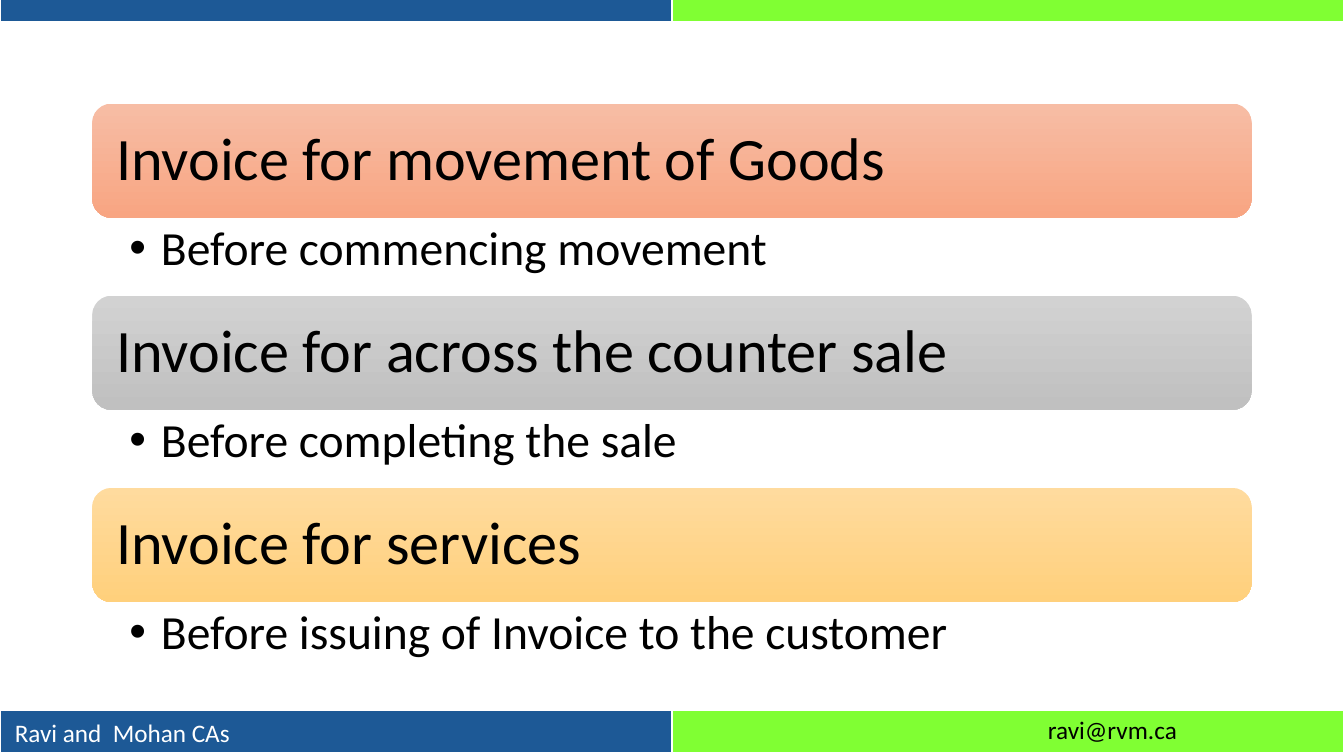
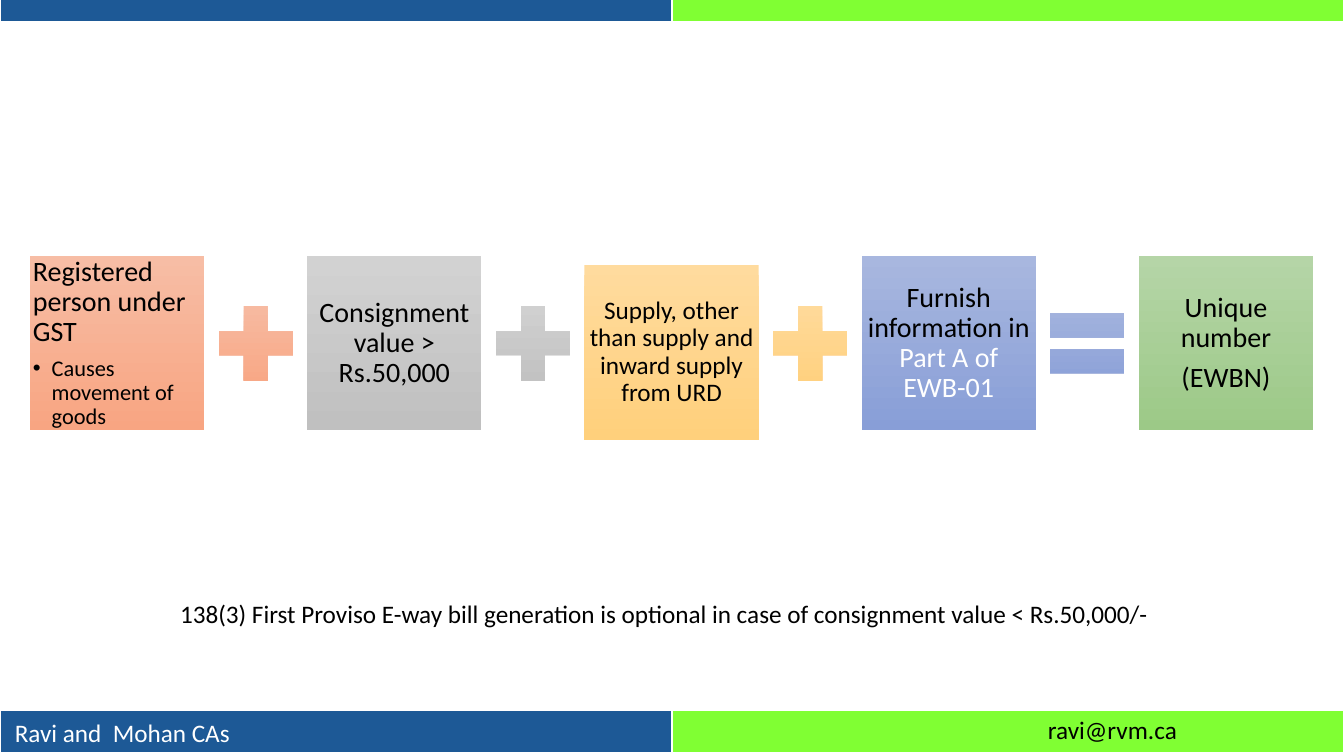
from lxml.etree import SubElement
from pptx import Presentation
from pptx.dml.color import RGBColor
from pptx.enum.shapes import MSO_SHAPE
from pptx.enum.text import MSO_ANCHOR, PP_ALIGN
from pptx.oxml import parse_xml
from pptx.oxml.ns import nsdecls, qn
from pptx.util import Pt

# Shared look
FONT = "Calibri"
BLACK, WHITE = "000000", "FFFFFF"
BAND_COLORS = ("1D5996", "80FF33")
ORANGE = ("F7BDA5", "F8A582")
GRAY = ("D2D2D2", "C0C0C0")
YELLOW = ("FFDB9E", "FFD07C")
BLUE = ("A8B7DF", "889ED7")
GREEN = ("B5D5A7", "9CC987")
PAGE_WIDTH, PAGE_HEIGHT = 960, 540
BAND_HEIGHT = 31
BAND_TOPS = (-15, 507.5)

# Invoice list
LIST_LEFT, LIST_TOP, LIST_WIDTH = 66, 74, 828
HEADING_HEIGHT, DETAIL_HEIGHT = 81.5, 55.75
INVOICES = [
    ("Invoice for movement of Goods", "Before commencing movement", ORANGE),
    ("Invoice for across the counter sale", "Before completing the sale", GRAY),
    ("Invoice for services", "Before issuing of Invoice to the customer", YELLOW),
]

# Equation: one box every step, with a sign centred in each gap
BOX_LEFT, BOX_TOP, BOX_SIZE, BOX_STEP = 21.5, 183, 124.5, 198
SIGN_SIZE = 72.5
PLUS, EQUAL = MSO_SHAPE.MATH_PLUS, MSO_SHAPE.MATH_EQUAL
CENTER = {"align": PP_ALIGN.CENTER}
# Each term: colours, drop below the row, sign that follows, pieces of text
TERMS = [
    (ORANGE, 0, PLUS, [
        ("Registered person under GST", {}),
        ("Causes movement of goods", {"size": 16, "indent": 13.5, "before": 7}),
    ]),
    (GRAY, 0, PLUS, [("Consignment value > Rs.50,000", CENTER)]),
    (YELLOW, 6.5, PLUS, [
        ("Supply, other than supply and inward supply from URD", {"size": 18, **CENTER}),
    ]),
    (BLUE, 0, EQUAL, [
        ("Furnish information in ", CENTER),
        ("Part A of EWB-01", {"color": WHITE, "join": True, **CENTER}),
    ]),
    (GREEN, 0, None, [
        ("Unique number", CENTER),
        ("(EWBN)", {"before": 7, **CENTER}),
    ]),
]


def rgb(value):
    return RGBColor.from_string(value)


def write(frame, text, size=20, color=BLACK, align=PP_ALIGN.LEFT, spacing=0.9,
          before=0, indent=0, join=False):
    """Add text as a new paragraph, or to the last one if join is set."""
    para = frame.paragraphs[-1]
    if para.runs and not join:
        para = frame.add_paragraph()
    para.alignment = align
    para.line_spacing = spacing
    if before:
        para.space_before = Pt(before)
    if indent:
        properties = para._p.get_or_add_pPr()
        properties.set("marL", str(Pt(indent)))
        properties.set("indent", str(-Pt(indent)))
        SubElement(properties, qn("a:buFont")).set("typeface", "Arial")
        SubElement(properties, qn("a:buChar")).set("char", "•")
    span = para.add_run()
    span.text = text
    span.font.name = FONT
    span.font.size = Pt(size)
    span.font.color.rgb = rgb(color)


def set_frame(shape, sides, ends, anchor):
    frame = shape.text_frame
    frame.word_wrap = True
    frame.margin_left = frame.margin_right = Pt(sides)
    frame.margin_top = frame.margin_bottom = Pt(ends)
    frame.vertical_anchor = anchor
    return frame


def add_label(page, left, top, width, height, sides=7.2, ends=3.6):
    box = page.shapes.add_textbox(Pt(left), Pt(top), Pt(width), Pt(height))
    return set_frame(box, sides, ends, MSO_ANCHOR.TOP)


def add_gradient_shape(page, kind, left, top, width, height, colors, margin=2):
    shape = page.shapes.add_shape(kind, Pt(left), Pt(top), Pt(width), Pt(height))
    shape.shadow.inherit = False
    shape.line.fill.background()
    shape.fill.gradient()
    shape.fill.gradient_angle = 270
    for stop, color in zip(shape.fill.gradient_stops, colors):
        stop.color.rgb = rgb(color)
    return set_frame(shape, margin, margin, MSO_ANCHOR.MIDDLE)


def add_band(page, top):
    table = page.shapes.add_table(
        1, 2, 0, Pt(top), Pt(PAGE_WIDTH), Pt(BAND_HEIGHT)).table
    table.first_row = table.horz_banding = False
    for cell, color in zip(table.iter_cells(), BAND_COLORS):
        cell.fill.solid()
        cell.fill.fore_color.rgb = rgb(color)
        borders = (("lnL", 1), ("lnR", 1), ("lnT", 1), ("lnB", 3))
        for position, (side, width) in enumerate(borders):
            cell._tc.get_or_add_tcPr().insert(position, parse_xml(
                f'<a:{side} {nsdecls("a")} w="{Pt(width)}"><a:solidFill>'
                f'<a:srgbClr val="{WHITE}"/></a:solidFill></a:{side}>'))


def add_page(deck):
    """Add a page with both bands and the footer texts."""
    page = deck.slides.add_slide(deck.slide_layouts[6])
    for top in BAND_TOPS:
        add_band(page, top)
    write(add_label(page, 3.5, 508.5, 180, 29), "Ravi and  Mohan CAs",
          size=18, color=WHITE, spacing=1)
    write(add_label(page, 741.5, 506.5, 130, 29), "ravi@rvm.ca", size=18, spacing=1)
    return page


def add_invoice_list(page):
    top = LIST_TOP
    for heading, detail, colors in INVOICES:
        frame = add_gradient_shape(page, MSO_SHAPE.ROUNDED_RECTANGLE, LIST_LEFT, top,
                                   LIST_WIDTH, HEADING_HEIGHT, colors, margin=13)
        write(frame, heading, size=43)
        top += HEADING_HEIGHT
        frame = add_label(page, LIST_LEFT, top, LIST_WIDTH, DETAIL_HEIGHT,
                          sides=26.5, ends=4.5)
        write(frame, detail, size=34, indent=22.5)
        top += DETAIL_HEIGHT


def add_equation(page):
    sign_offset = (BOX_STEP + BOX_SIZE - SIGN_SIZE) / 2
    sign_top = BOX_TOP + (BOX_SIZE - SIGN_SIZE) / 2
    for index, (colors, drop, sign, pieces) in enumerate(TERMS):
        left = BOX_LEFT + index * BOX_STEP
        frame = add_gradient_shape(page, MSO_SHAPE.RECTANGLE, left, BOX_TOP + drop,
                                   BOX_SIZE, BOX_SIZE, colors)
        for text, style in pieces:
            write(frame, text, **style)
        if sign:
            add_gradient_shape(page, sign, left + sign_offset, sign_top,
                               SIGN_SIZE, SIGN_SIZE, colors)


def main():
    deck = Presentation()
    deck.slide_width, deck.slide_height = Pt(PAGE_WIDTH), Pt(PAGE_HEIGHT)

    # When to issue the invoice
    add_invoice_list(add_page(deck))

    # What makes up an e-way bill number
    page = add_page(deck)
    add_equation(page)
    write(add_label(page, 121.5, 423.5, 779, 29),
          "138(3) First Proviso E-way bill generation is optional in case of "
          "consignment value < Rs.50,000/-", size=18, spacing=1)

    deck.save("out.pptx")


if __name__ == "__main__":
    main()
